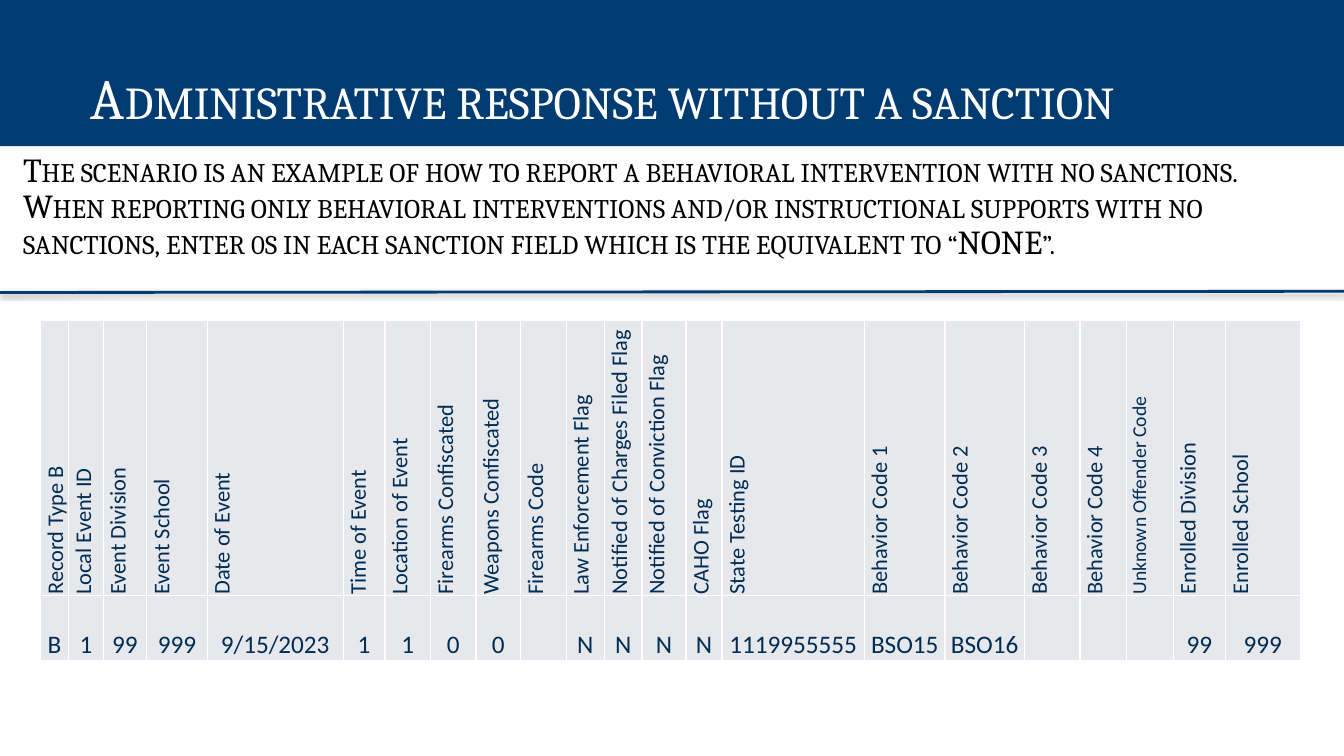
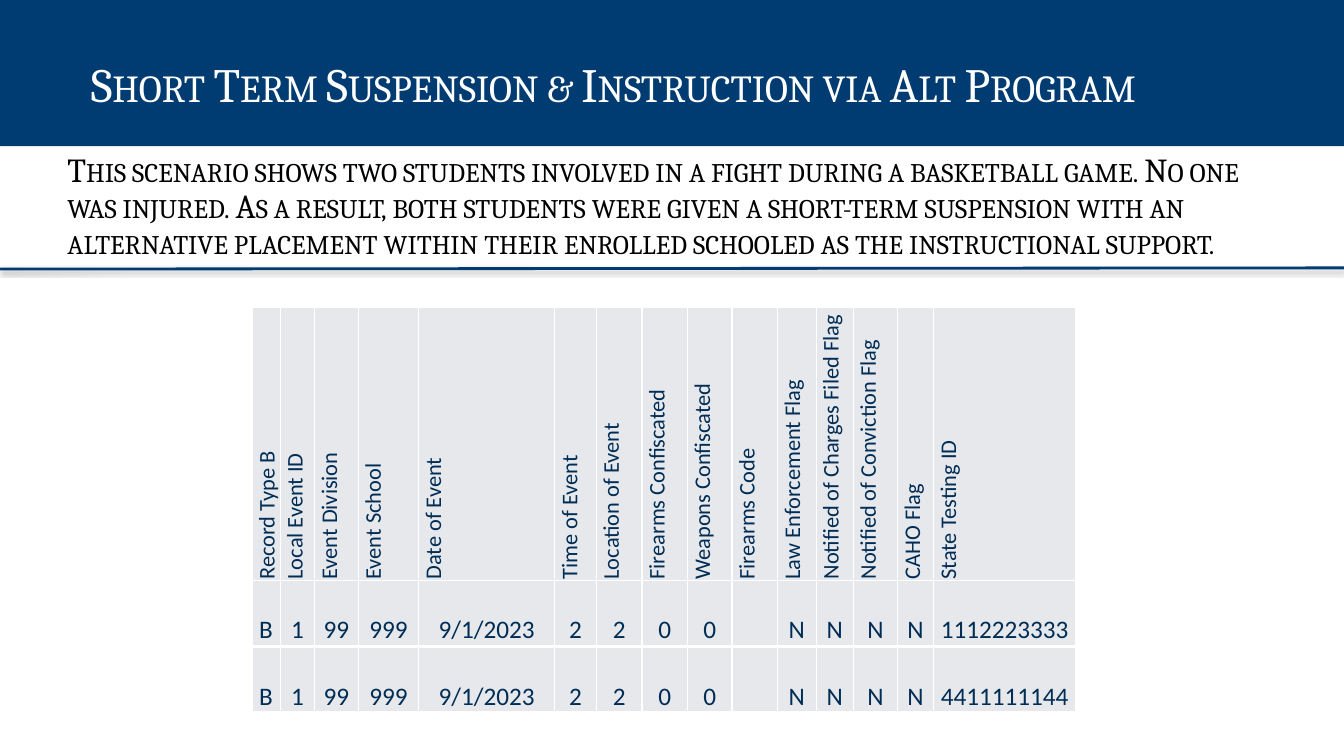
from lxml.etree import SubElement
from pptx import Presentation
from pptx.dml.color import RGBColor
from pptx.enum.shapes import MSO_CONNECTOR
from pptx.enum.text import MSO_ANCHOR, MSO_AUTO_SIZE, PP_ALIGN
from pptx.oxml import parse_xml
from pptx.oxml.ns import nsdecls, qn
from pptx.util import Cm, Pt

NAVY, INK, CELL, WHITE, BLACK = "003C71", "002D55", "E7E8EB", "FFFFFF", "000000"
SERIF, SANS = "Cambria", "Calibri"
SLIDE_W, SLIDE_H, BAND_H = 33.87, 19.05, 3.68
DATA_ROW_H = 1.63

EVENT_COLUMNS = [
    ("Record Type B", 0.71), ("Local Event ID", 0.87), ("Event Division", 1.1),
    ("Event School", 1.52), ("Date of Event", 3.43), ("Time of Event", 1.05),
    ("Location of Event", 1.15), ("Firearms Confiscated", 1.15),
    ("Weapons Confiscated", 1.12), ("Firearms Code", 1.15),
    ("Law Enforcement Flag", 0.97), ("Notified of Charges Filed Flag", 0.94),
    ("Notified of Conviction Flag", 1.11), ("CAHO Flag", 0.91),
    ("State Testing ID", 3.59),
]
OFFENDER_COLUMNS = [
    ("Behavior Code 1", 2.03), ("Behavior Code 2", 2.0), ("Behavior Code 3", 1.4),
    ("Behavior Code 4", 1.17), ("Unknown Offender Code", 1.18),
    ("Enrolled Division", 1.32), ("Enrolled School", 1.88),
]
HEADER_SIZES = {"Unknown Offender Code": 14}


def rgb(value):
    """Turn a hex string into a colour."""
    return RGBColor.from_string(value)


def apply(target, formats):
    """Set every attribute named in a dict of format values."""
    for name, value in formats.items():
        setattr(target, name, value)


def place(sp, box):
    """Move a shape to a box given in centimetres."""
    apply(sp, dict(zip(("left", "top", "width", "height"), map(Cm, box))))


def write(p, text, font, size, color, small_caps=False):
    """Add one formatted run to a paragraph."""
    r = p.add_run()
    r.text = text
    apply(r.font, {"name": font, "size": Pt(size), "bold": False})
    r.font.color.rgb = rgb(color)
    if small_caps:
        r.font._element.set("cap", "small")


def fill_placeholder(sp, box, insets, text, size, color, spacing):
    """Place a placeholder and give it one small-caps paragraph."""
    place(sp, box)
    tf = sp.text_frame
    apply(tf, {"word_wrap": True, "auto_size": MSO_AUTO_SIZE.NONE,
               "vertical_anchor": MSO_ANCHOR.TOP})
    sides = ("margin_left", "margin_top", "margin_right", "margin_bottom")
    apply(tf, dict(zip(sides, map(Cm, insets))))
    p = tf.paragraphs[0]
    apply(p, {"alignment": PP_ALIGN.LEFT, "line_spacing": spacing,
              "space_before": Pt(0)})
    pPr = p._p.get_or_add_pPr()
    apply_xml = {"marL": "0", "indent": "0"}
    for name, value in apply_xml.items():
        pPr.set(name, value)
    SubElement(pPr, qn("a:buNone"))
    write(p, text, SERIF, size, color, small_caps=True)


def add_title_band(s, box, text, size, spacing):
    """Fill the title placeholder as a navy band."""
    sp = s.shapes.title
    fill_placeholder(sp, box, (2.29, 1.78, 0.25, 0.13), text, size, WHITE, spacing)
    sp.fill.solid()
    sp.fill.fore_color.rgb = rgb(NAVY)


def add_scenario(s, box, text):
    """Fill the body placeholder with the scenario text."""
    fill_placeholder(s.placeholders[1], box, (0.33, 0.18, 0.33, 0.18),
                     text, 24, BLACK, 0.9)


def add_rule(s, y):
    """Draw the shadowed rule across the slide."""
    line = s.shapes.add_connector(MSO_CONNECTOR.STRAIGHT, Cm(0), Cm(y),
                                  Cm(SLIDE_W), Cm(y - 0.03))
    line.line.color.rgb = rgb(NAVY)
    line.line.width = Pt(2)
    line._element.spPr.append(parse_xml(
        f'<a:effectLst {nsdecls("a")}><a:outerShdw blurRad="{Pt(3.1)}" '
        f'dist="{Pt(1.6)}" dir="5400000" rotWithShape="0"><a:srgbClr val="{BLACK}">'
        '<a:alpha val="38000"/></a:srgbClr></a:outerShdw></a:effectLst>'))


def format_cell(cell, text, header):
    """Write and style one header or data cell."""
    apply(cell, {"margin_left": Cm(0.03), "margin_right": Cm(0.03),
                 "margin_top": Cm(0.03), "margin_bottom": Cm(0),
                 "vertical_anchor": MSO_ANCHOR.BOTTOM})
    tcPr = cell._tc.get_or_add_tcPr()
    for side in ("lnL", "lnR", "lnT", "lnB"):
        tcPr.append(parse_xml(
            f'<a:{side} {nsdecls("a")} w="{Pt(1)}"><a:solidFill>'
            f'<a:srgbClr val="{WHITE}"/></a:solidFill></a:{side}>'))
    cell.fill.solid()
    cell.fill.fore_color.rgb = rgb(CELL)
    p = cell.text_frame.paragraphs[0]
    if header:
        tcPr.set("vert", "vert270")
    else:
        p.alignment = PP_ALIGN.CENTER
    if text:
        size = HEADER_SIZES.get(text, 16) if header else 18
        write(p, text, SANS, size, INK)


def add_record_table(s, x, y, columns, records, header_h=None):
    """Add a table of records, with a vertical header if it has a height."""
    names, widths = zip(*columns)
    rows = [names] * bool(header_h) + records
    heights = [header_h] * bool(header_h) + [DATA_ROW_H] * len(records)
    table = s.shapes.add_table(len(rows), len(names), Cm(x), Cm(y),
                               Cm(sum(widths)), Cm(sum(heights))).table
    apply(table, {"first_row": False, "horz_banding": False})
    for col, width in zip(table.columns, widths):
        col.width = Cm(width)
    for i, (row, height) in enumerate(zip(rows, heights)):
        table.rows[i].height = Cm(height)
        for j, text in enumerate(row):
            format_cell(table.cell(i, j), text, bool(header_h) and i == 0)


def add_scenario_slide(prs, title, size, spacing, scenario, left, width, rule_y):
    """Add a slide with title band, scenario text and rule."""
    s = prs.slides.add_slide(prs.slide_layouts[1])
    add_title_band(s, (0, 0, SLIDE_W, BAND_H), title, size, spacing)
    add_scenario(s, (left, BAND_H, width, 14.27), scenario)
    add_rule(s, rule_y)
    return s


def event_record(date, code, testing_id):
    """Return the event fields of one record."""
    return ["B", "1", "99", "999", date, code, code, "0", "0", "",
            *"NNNN", testing_id]


def main():
    """Build and save the two scenario slides."""
    prs = Presentation()
    apply(prs, {"slide_width": Cm(SLIDE_W), "slide_height": Cm(SLIDE_H)})

    s = add_scenario_slide(
        prs, "Administrative response without a sanction", 40.7, 0.9,
        "The scenario is an example of how to report a behavioral intervention "
        "with no sanctions. When reporting only behavioral interventions and/or "
        "instructional supports with no sanctions, enter 0s in each sanction "
        "field which is the equivalent to “NONE”.", 0.25, 33.07, 7.37)
    record = event_record("9/15/2023", "1", "1119955555")
    record += ["BSO15", "BSO16", "", "", "", "99", "999"]
    add_record_table(s, 1.02, 8.08, EVENT_COLUMNS + OFFENDER_COLUMNS, [record], 6.93)

    s = add_scenario_slide(
        prs, "Short Term Suspension & Instruction via Alt Program", 34.1, 0.7,
        "This scenario shows two students involved in a fight during a basketball "
        "game. No one was injured. As a result, both students were given a "
        "short-term suspension with an alternative placement within their "
        "enrolled schooled as the instructional support.", 1.37, 30.25, 6.78)
    first, second = (event_record("9/1/2023", "2", testing_id)
                     for testing_id in ("1112223333", "4411111144"))
    add_record_table(s, 6.35, 7.75, EVENT_COLUMNS, [first], 6.88)
    add_record_table(s, 6.35, 16.31, EVENT_COLUMNS, [second])

    prs.save("out.pptx")


if __name__ == "__main__":
    main()
